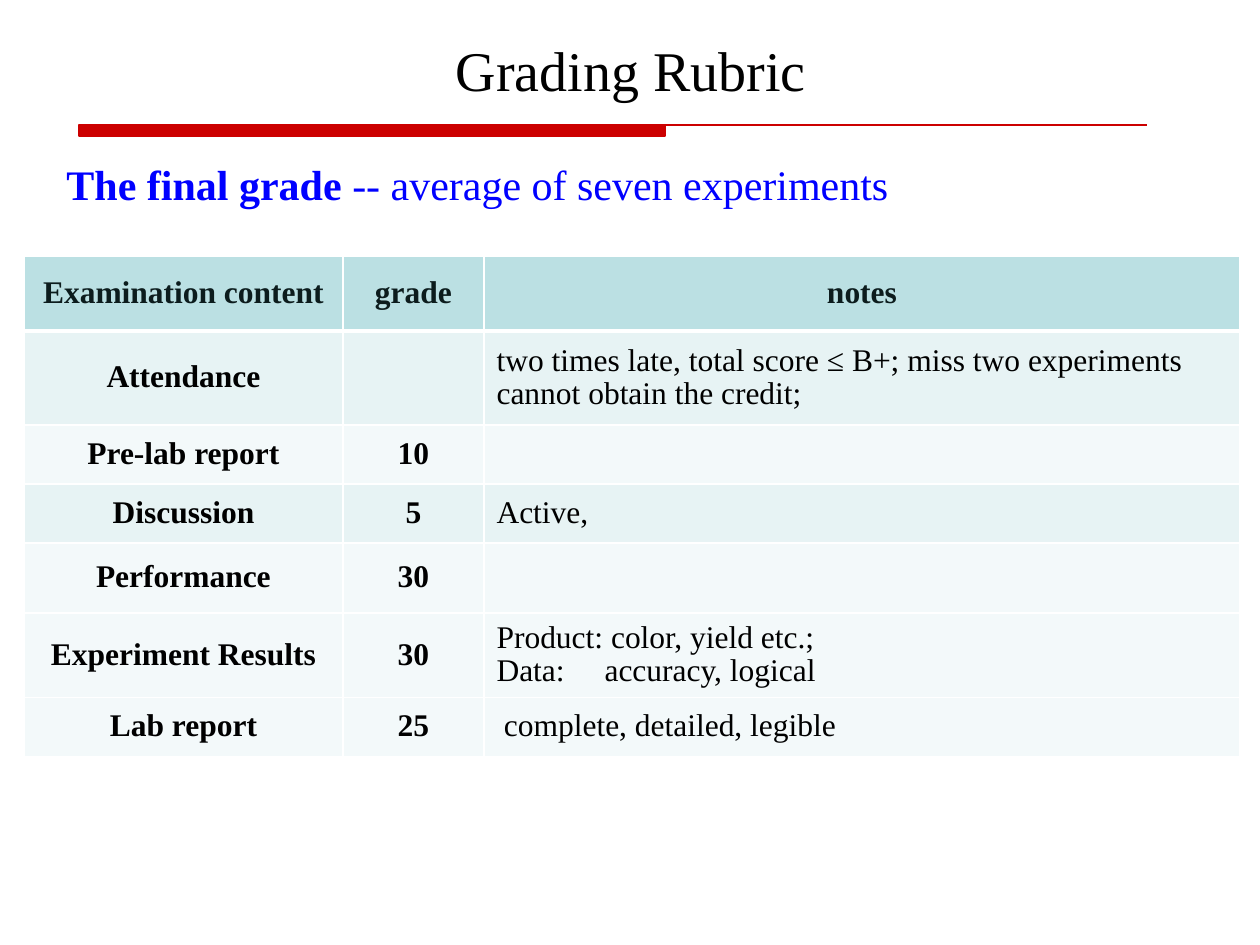
from lxml.etree import SubElement
from pptx import Presentation
from pptx.dml.color import RGBColor as Rgb
from pptx.enum.shapes import MSO_CONNECTOR as Connector, MSO_SHAPE as Shape
from pptx.enum.text import MSO_ANCHOR as Anchor, PP_ALIGN as Align
from pptx.oxml.ns import qn
from pptx.util import Pt

COLORS = {
    "black": "000000", "white": "FFFFFF", "red": "CC0000", "blue": "0000FF",
    "header_text": "0C1C1D", "header": "BBE0E3", "band": "E7F3F4", "plain": "F3F9FA",
}
COLUMNS = [319, 141, 756]
RUBRIC = [
    (75, "header", "Examination content", "grade", ["notes"]),
    (94, "band", "Attendance", "",
     ["two times late, total score ≤ B+; miss two experiments cannot obtain the credit;"]),
    (59, "plain", "Pre-lab report", "10", []),
    (59, "band", "Discussion", "5", ["Active,"]),
    (70, "plain", "Performance", "30", []),
    (82, "plain", "Experiment Results", "30",
     ["Product: color, yield etc.;", "Data:\taccuracy, logical"]),
    (59, "plain", "Lab report", "25", ["complete, detailed, legible"]),
]


class Page:
    """Draws styled elements on one slide, measured in px."""

    FONT = "Times New Roman"
    SCALE = 914400 / 126
    SPACING = 0.95

    def __init__(self, deck):
        deck.slide_width, deck.slide_height = self.emu(1260), self.emu(945)
        self.shapes = deck.slides.add_slide(deck.slide_layouts[6]).shapes

    def emu(self, px):
        return round(px * self.SCALE)

    def color(self, name):
        return Rgb.from_string(COLORS[name])

    def span(self, para, text, size, color, bold=False):
        run = para.add_run()
        run.text = text
        run.font.name, run.font.size, run.font.bold = self.FONT, Pt(size), bold
        run.font.color.rgb = self.color(color)

    def text(self, bounds, spans, size, color, align=Align.LEFT, anchor=Anchor.TOP, spacing=1.0):
        frame = self.shapes.add_textbox(*map(self.emu, bounds)).text_frame
        frame.word_wrap, frame.vertical_anchor = True, anchor
        para = frame.paragraphs[0]
        para.alignment, para.line_spacing = align, spacing
        for words, bold in spans:
            self.span(para, words, size, color, bold)

    def line(self, start, end, color, width):
        line = self.shapes.add_connector(Connector.STRAIGHT, *map(self.emu, start + end))
        line.line.color.rgb, line.line.width = self.color(color), Pt(width)
        SubElement(line.element.spPr, qn("a:effectLst"))

    def bar(self, bounds, color, width):
        bar = self.shapes.add_shape(Shape.RECTANGLE, *map(self.emu, bounds))
        bar.shadow.inherit = False
        bar.fill.solid()
        bar.fill.fore_color.rgb = bar.line.color.rgb = self.color(color)
        bar.line.width = Pt(width)

    def border(self, cell, side, color, width):
        edge = SubElement(cell._tc.get_or_add_tcPr(), qn(f"a:ln{side}"), w=str(Pt(width)))
        SubElement(SubElement(edge, qn("a:solidFill")), qn("a:srgbClr"), val=COLORS[color])

    def tab_stop(self, para, px):
        stops = SubElement(para._p.get_or_add_pPr(), qn("a:tabLst"))
        SubElement(stops, qn("a:tab"), pos=str(self.emu(px)), algn="l")

    def cell(self, cell, lines, fill, color, bold, align, edges):
        for side, width in edges.items():
            self.border(cell, side, "white", width)
        cell.fill.solid()
        cell.fill.fore_color.rgb = self.color(fill)
        cell.vertical_anchor = Anchor.MIDDLE
        frame = cell.text_frame
        for index, words in enumerate(lines):
            para = frame.add_paragraph() if index else frame.paragraphs[0]
            para.alignment, para.line_spacing = align, self.SPACING
            if "\t" in words:
                self.tab_stop(para, 108)
            self.span(para, words, 18, color, bold)

    def table(self, left, top, columns, rows):
        size = sum(columns), sum(row[0] for row in rows)
        table = self.shapes.add_table(
            len(rows), len(columns), *map(self.emu, (left, top, *size))).table
        for column, width in zip(table.columns, columns):
            column.width = self.emu(width)
        for index, (height, fill, content, grade, notes) in enumerate(rows):
            table.rows[index].height = self.emu(height)
            header = index == 0
            edges = {"L": 1, "R": 1, "T": 3 if index == 1 else 1, "B": 3 if header else 1}
            for column, lines in enumerate(([content], [grade] if grade else [], notes)):
                strong = header or column < 2
                self.cell(table.cell(index, column), lines, fill,
                          "header_text" if header else "black", strong,
                          Align.CENTER if strong else Align.LEFT, edges)
        return table


def main():
    deck = Presentation()
    page = Page(deck)
    page.line((79, 125), (1147, 125), "red", 1.25)
    page.bar((79, 125, 586, 11), "red", 1.5)
    page.text((64, 26, 1134, 92), [("Grading Rubric", False)], 32, "black",
              Align.CENTER, Anchor.MIDDLE, page.SPACING)
    rubric = page.table(24, 256, COLUMNS, RUBRIC)
    rubric.cell(len(RUBRIC) - 1, 2).margin_left = page.emu(20)
    page.text((54, 152, 977, 63),
              [("The final grade ", True), ("-- average of seven experiments", False)],
              24, "blue")
    deck.save("out.pptx")


if __name__ == "__main__":
    main()
